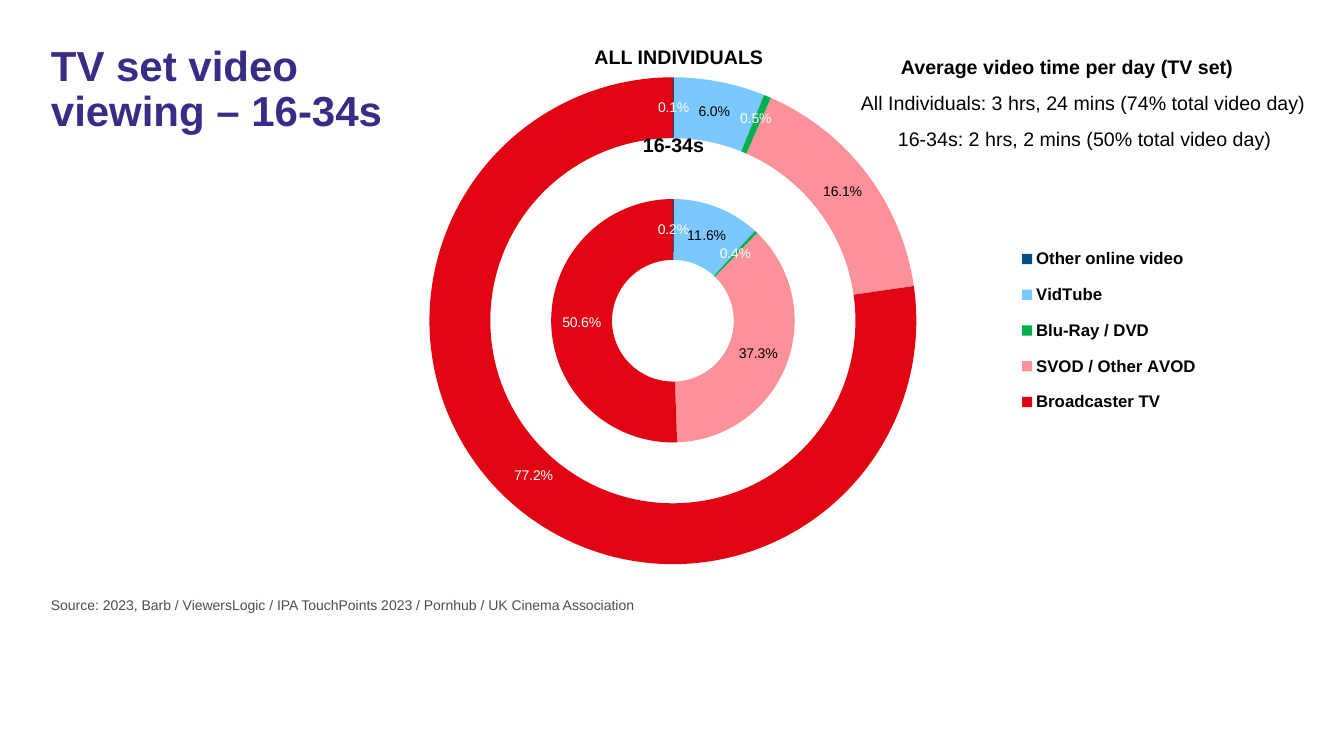
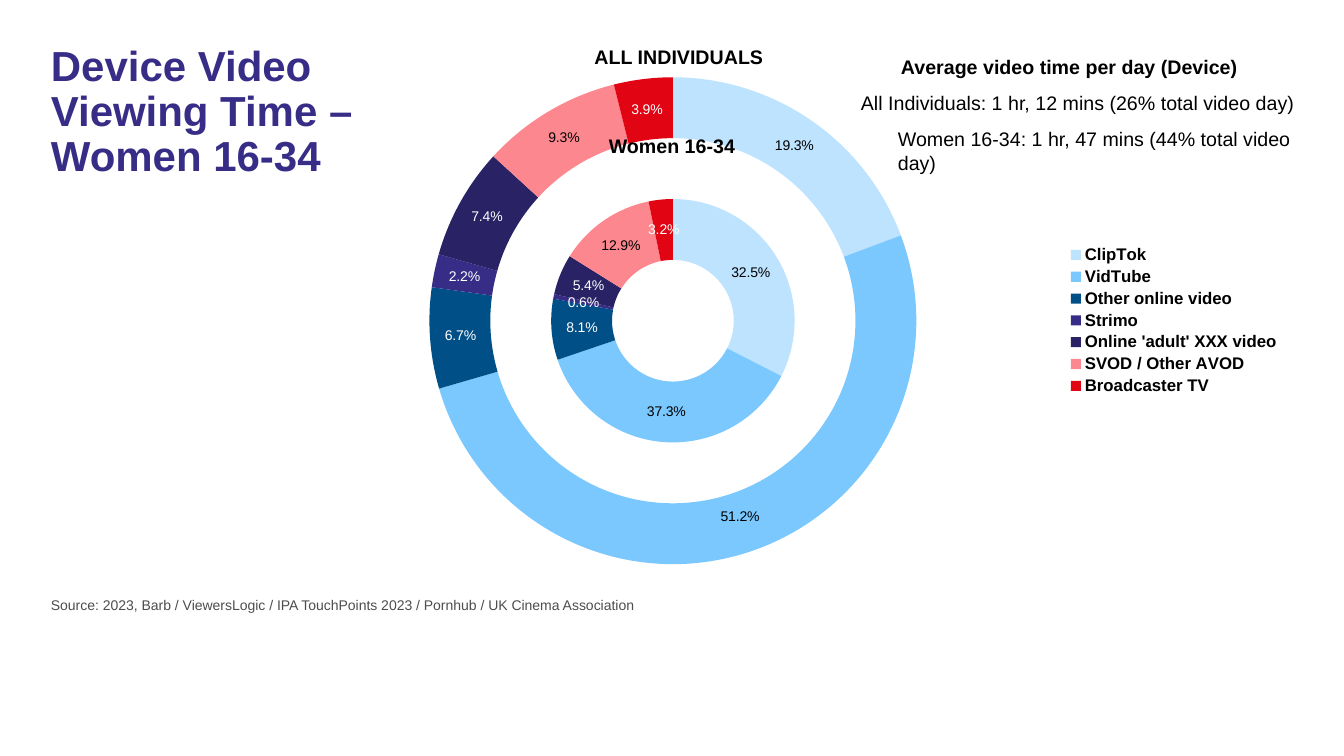
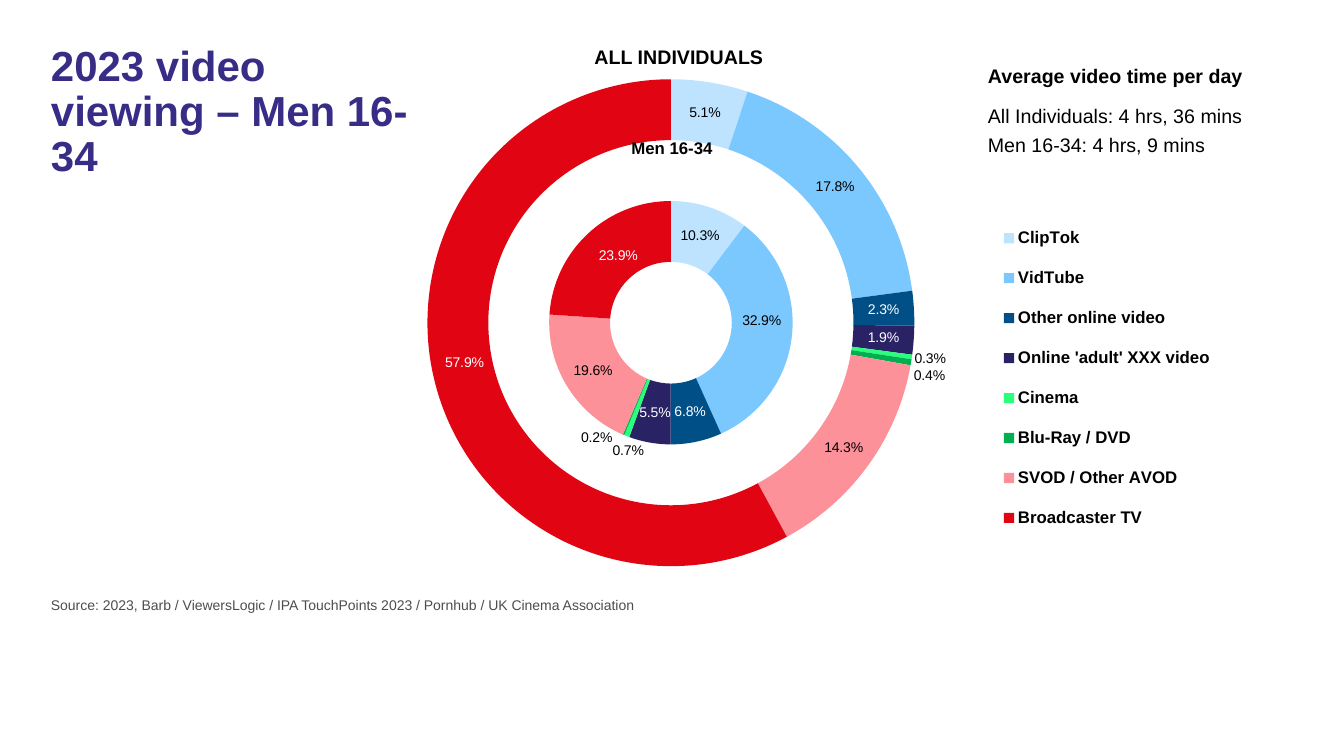
from lxml.etree import SubElement
from pptx import Presentation
from pptx.chart.data import CategoryChartData
from pptx.dml.color import RGBColor
from pptx.enum.chart import XL_CHART_TYPE as CT, XL_LEGEND_POSITION as LP
from pptx.enum.text import PP_ALIGN as AL
from pptx.oxml.ns import qn
from pptx.util import Emu, Pt

PX = 914400 / 100.8
FONT = "Arial"
BLACK, WHITE, INDIGO, GREY = "000000", "FFFFFF", "372D87", "4D4D4D"
PINK, SALMON = "FD9199", "FD878F"
SKY, PALE, NAVY = "7BC8FF", "BDE3FF", "004F87"
LIGHT = {PALE, SKY, PINK, SALMON}  # wedges that carry black labels
PERCENT = '0.0"%"'

COLORS = {
    "ClipTok": PALE, "VidTube": SKY, "Other online video": NAVY,
    "Strimo": INDIGO, "Online 'adult' XXX video": "292265",
    "Cinema": "2AFF7C", "Blu-Ray / DVD": "00B050",
    "SVOD / Other AVOD": PINK, "Broadcaster TV": "E10514",
}
SOURCE = ("Source: 2023, Barb / ViewersLogic / IPA TouchPoints 2023 / "
          "Pornhub / UK Cinema Association")


def px(n):
    return Emu(round(n * PX))


def rgb(value):
    return RGBColor.from_string(value)


def set_font(font, size, color=BLACK, bold=False):
    for key, value in dict(name=FONT, size=Pt(size), bold=bold).items():
        setattr(font, key, value)
    font.color.rgb = rgb(color)


def set_layout(parent, index, **parts):
    """Put a manual chart layout into parent at the given child index."""
    for old in parent.findall(qn("c:layout")):
        parent.remove(old)
    layout = SubElement(parent, qn("c:layout"))
    parent.insert(index, layout)
    manual = SubElement(layout, qn("c:manualLayout"))
    for tag, value in parts.items():
        SubElement(manual, qn("c:" + tag)).set("val", str(value))


class Deck:
    def __init__(self):
        self.prs = Presentation()
        self.prs.slide_width, self.prs.slide_height = px(1344), px(756)
        self.s = None

    def text(self, x, y, w, h, text, size=14, color=BLACK, bold=False,
             align=AL.LEFT, spacing=None):
        tf = self.s.shapes.add_textbox(px(x), px(y), px(w), px(h)).text_frame
        tf.word_wrap = True
        p = tf.paragraphs[0]
        p.alignment, p.line_spacing = align, spacing
        r = p.add_run()
        r.text = text
        set_font(r.font, size, color, bold)

    def slide(self, title):
        """Start a slide with the shared title and source line."""
        self.s = self.prs.slides.add_slide(self.prs.slide_layouts[6])
        self.text(41, 40, 385, 278, title, 30, INDIGO, True, spacing=0.9)
        self.text(41, 592, 1250, 33, SOURCE, 10, GREY)

    def caption(self, center, y, w, text, size=14):
        self.text(center - w // 2, y, w, 34, text, size, bold=True,
                  align=AL.CENTER)

    def rings(self, x, y, audience, rows, legend, colors, moved):
        """Two rings, the audience inside and everyone outside."""
        w, h = 968, 613
        data = CategoryChartData(number_format="0.0")
        data.categories = list(rows)
        inner, outer = zip(*rows.values())
        data.add_series(audience, inner)
        data.add_series("Gap", [None] * len(rows))
        data.add_series("All individuals", outer)
        chart = self.s.shapes.add_chart(
            CT.DOUGHNUT, px(x), px(y), px(w), px(h), data).chart
        set_font(chart.font, 18)
        chart.has_title = False
        plot = chart.plots[0]
        plot.vary_by_categories = True
        area = chart.element.find(".//" + qn("c:plotArea"))
        area.find(".//" + qn("c:holeSize")).set("val", "47")
        set_layout(area, 0, layoutTarget="inner", xMode="edge", yMode="edge",
                   x=0.11, y=0.095, w=0.503, h=0.811)

        # Legend
        chart.has_legend = True
        chart.legend.position = LP.RIGHT
        chart.legend.include_in_layout = False
        set_font(chart.legend.font, 12, bold=True)
        lx, ly, lw, lh = legend
        set_layout(chart.element.find(".//" + qn("c:legend")), 1,
                   xMode="edge", yMode="edge",
                   x=round((lx - x) / w, 3), y=round((ly - y) / h, 3),
                   w=round(lw / w, 3), h=round(lh / h, 3))

        # Wedges and their labels
        for ring, series in enumerate(plot.series):
            for i, name in enumerate(rows):
                point, color = series.points[i], colors[name]
                point.format.fill.solid()
                point.format.fill.fore_color.rgb = rgb(color)
                point.format.line.fill.background()
                if ring != 1:
                    dx, dy = moved.get((ring, name), (0, 0))
                    outside = abs(dx) + abs(dy) > 0.03
                    set_font(point.data_label.font, 10,
                             BLACK if color in LIGHT or outside else WHITE)
            if ring == 1:
                continue
            labels = series.data_labels
            labels.show_value = True
            labels.number_format = PERCENT
            labels.number_format_is_linked = False
            set_font(labels.font, 10, WHITE)
            ser = labels._element.getparent()
            for name, label in zip(rows, ser.iter(qn("c:dLbl"))):
                fmt = SubElement(label, qn("c:numFmt"))
                fmt.set("formatCode", PERCENT)
                fmt.set("sourceLinked", "0")
                label.insert(1, fmt)
                if (ring, name) in moved:
                    dx, dy = moved[ring, name]
                    set_layout(label, 1, x=dx, y=dy)


def main():
    deck = Deck()
    # Each row: category, then share of the audience and of all individuals
    # Each moved label: ring and category, then its shift as chart fractions
    pages = [
        dict(title="TV set video viewing – 16-34s", chart=(323, 14),
             audience="16-34s", caption=(673, 128, 119),
             notes=[(891, 50, 385, "Average video time per day (TV set)"),
                    (851, 86, 493, "All Individuals: 3 hrs, 24 mins (74% total video day)"),
                    (888, 122, 422, "16-34s: 2 hrs, 2 mins (50% total video day)")],
             legend=(1010, 232, 197, 197),
             moved={(2, "Blu-Ray / DVD"): (0, -0.01),
                    (2, "Broadcaster TV"): (0, -0.01)},
             rows={"Other online video": (0.2, 0.1), "VidTube": (11.6, 6),
                   "Blu-Ray / DVD": (0.4, 0.5),
                   "SVOD / Other AVOD": (37.3, 16.1),
                   "Broadcaster TV": (50.6, 77.2)}),
        dict(title="Device Video Viewing Time – Women 16-34", chart=(323, 14),
             audience="Women 16-34", caption=(672, 129, 152),
             notes=[(891, 50, 385, "Average video time per day (Device)"),
                    (851, 86, 493, "All Individuals: 1 hr, 12 mins (26% total video day)"),
                    (888, 122, 422, "Women 16-34: 1 hr, 47 mins (44% total video day)")],
             legend=(1059, 242, 230, 157),
             colors={"SVOD / Other AVOD": SALMON},
             moved={(2, "VidTube"): (0, -0.01)},
             rows={"ClipTok": (32.5, 19.3), "VidTube": (37.3, 51.2),
                   "Other online video": (8.1, 6.7), "Strimo": (0.6, 2.2),
                   "Online 'adult' XXX video": (5.4, 7.4),
                   "SVOD / Other AVOD": (12.9, 9.3),
                   "Broadcaster TV": (3.2, 3.9)}),
        dict(title="2023 video viewing – Men 16-34", chart=(321, 16),
             audience="Men 16-34", caption=(672, 133, 140, 12),
             notes=[(978, 59, 366, "Average video time per day"),
                    (978, 99, 301, "All Individuals: 4 hrs, 36 mins"),
                    (978, 128, 284, "Men 16-34: 4 hrs, 9 mins")],
             legend=(992, 207, 230, 342),
             moved={(0, "Cinema"): (-0.01, 0.07),
                    (0, "Blu-Ray / DVD"): (-0.04, 0.05),
                    (0, "VidTube"): (0, -0.02),
                    (0, "Broadcaster TV"): (0.01, 0),
                    (2, "Cinema"): (0.05, 0.01),
                    (2, "Blu-Ray / DVD"): (0.05, 0.03),
                    (2, "Broadcaster TV"): (0, -0.02)},
             rows={"ClipTok": (10.3, 5.1), "VidTube": (32.9, 17.8),
                   "Other online video": (6.8, 2.3),
                   "Online 'adult' XXX video": (5.5, 1.9),
                   "Cinema": (0.7, 0.3), "Blu-Ray / DVD": (0.2, 0.4),
                   "SVOD / Other AVOD": (19.6, 14.3),
                   "Broadcaster TV": (23.9, 57.9)}),
    ]
    for page in pages:
        deck.slide(page["title"])
        deck.rings(*page["chart"], page["audience"], page["rows"],
                   page["legend"], COLORS | page.get("colors", {}),
                   page["moved"])
        for i, (x, y, w, text) in enumerate(page["notes"]):
            deck.text(x, y, w, 34, text, bold=i == 0)
        deck.caption(679, 40, 194, "ALL INDIVIDUALS")
        center, y, w, *size = page["caption"]
        deck.caption(center, y, w, page["audience"], *size)
    deck.prs.save("out.pptx")


if __name__ == "__main__":
    main()
